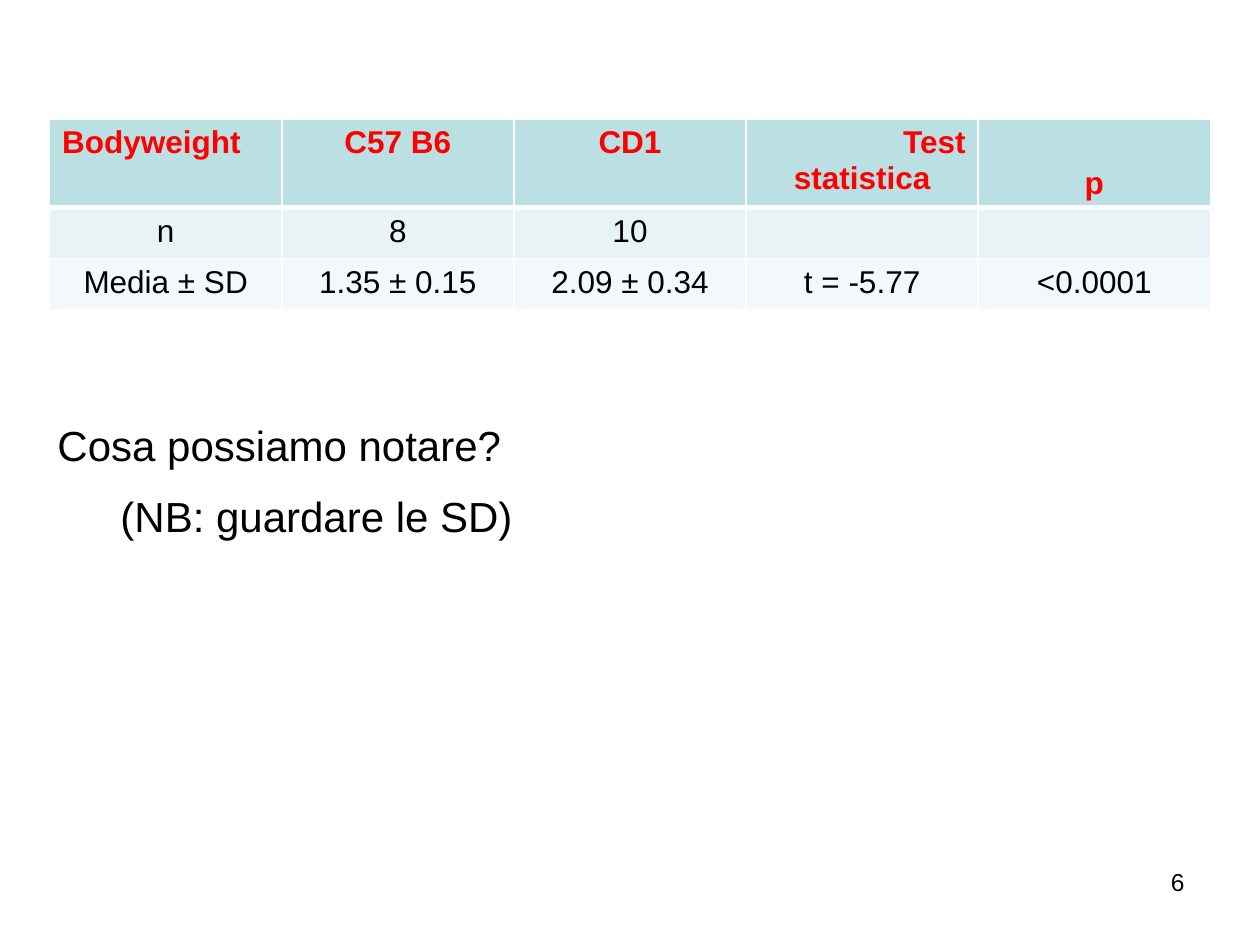
import pptx
import pptx.dml.color
import pptx.enum.text
import pptx.oxml
import pptx.oxml.ns
import pptx.util
from pptx.util import Cm, Pt

ALIGN = pptx.enum.text.PP_ALIGN
ANCHOR = pptx.enum.text.MSO_ANCHOR
LEFT, MID, RIGHT = ALIGN.LEFT, ALIGN.CENTER, ALIGN.RIGHT

ROWS = [
    ["Bodyweight", "C57 B6", "CD1", "Test\nstatistica", "p"],
    ["n", "8", "10", "", ""],
    ["Media ± SD", "1.35 ± 0.15", "2.09 ± 0.34", "t = -5.77", "<0.0001"],
]
FILLS = ["BBE0E3", "E7F3F4", "F3F9FA"]
HEIGHTS = [1.77, 1.03, 1.03]
SIDES = {"Bodyweight": LEFT, "Test": RIGHT}
NOTES = ["Cosa possiamo notare?", "\t(NB: guardare le SD)"]
NUMBER = "6"


def color(code):
    return pptx.dml.color.RGBColor.from_string(code)


def style(para, size, code="000000", bold=False, align=LEFT):
    para.alignment = align
    font = para.font
    font.name, font.size, font.bold = "Arial", Pt(size), bold
    font.color.rgb = color(code)


def border(cell, widths):
    """Draw white cell borders; widths maps L, R, T and B to points."""
    props = cell._tc.get_or_add_tcPr()
    for place, (side, width) in enumerate(widths.items()):
        line = pptx.oxml.parse_xml(
            f'<a:ln{side} {pptx.oxml.ns.nsdecls("a")} w="{Pt(width)}">'
            '<a:solidFill><a:srgbClr val="FFFFFF"/></a:solidFill>'
            f'</a:ln{side}>')
        props.insert(place, line)


def add_grid(slide):
    frame = slide.shapes.add_table(
        len(ROWS), len(ROWS[0]), Cm(1), Cm(2.4), Cm(23.4), Cm(sum(HEIGHTS)))
    table = frame.table
    for r, texts in enumerate(ROWS):
        head = r == 0
        table.rows[r].height = Cm(HEIGHTS[r])
        for c, text in enumerate(texts):
            cell = table.cell(r, c)
            cell.text = text
            cell.fill.solid()
            cell.fill.fore_color.rgb = color(FILLS[r])
            border(cell, {"L": 1, "R": 1, "T": 3 if r == 1 else 1,
                          "B": 3 if head else 1})
            for para in cell.text_frame.paragraphs:
                style(para, 18, "FF0000" if head else "000000", head,
                      SIDES.get(para.text, MID))
    table.cell(0, len(ROWS[0]) - 1).vertical_anchor = ANCHOR.BOTTOM


def add_text(slide, place, lines, size, align=LEFT, after=0, wrap=True):
    frame = slide.shapes.add_textbox(*map(Cm, place)).text_frame
    frame.word_wrap = wrap
    frame.text = "\n".join(lines)
    for para in frame.paragraphs:
        style(para, size, align=align)
        para.space_after = Pt(after)
    return frame


def main():
    deck = pptx.Presentation()
    deck.slide_width, deck.slide_height = Cm(25.4), Cm(19.05)
    slide = deck.slides.add_slide(deck.slide_layouts[6])
    add_text(slide, (21.69, 17.35, 2.44, 1.32), [NUMBER], 14, RIGHT)
    add_grid(slide)
    notes = add_text(slide, (0.91, 8.33, 10.97, 3.12), NOTES, 24,
                     after=12, wrap=False)
    notes.auto_size = pptx.enum.text.MSO_AUTO_SIZE.SHAPE_TO_FIT_TEXT
    deck.save("out.pptx")


if __name__ == "__main__":
    main()
